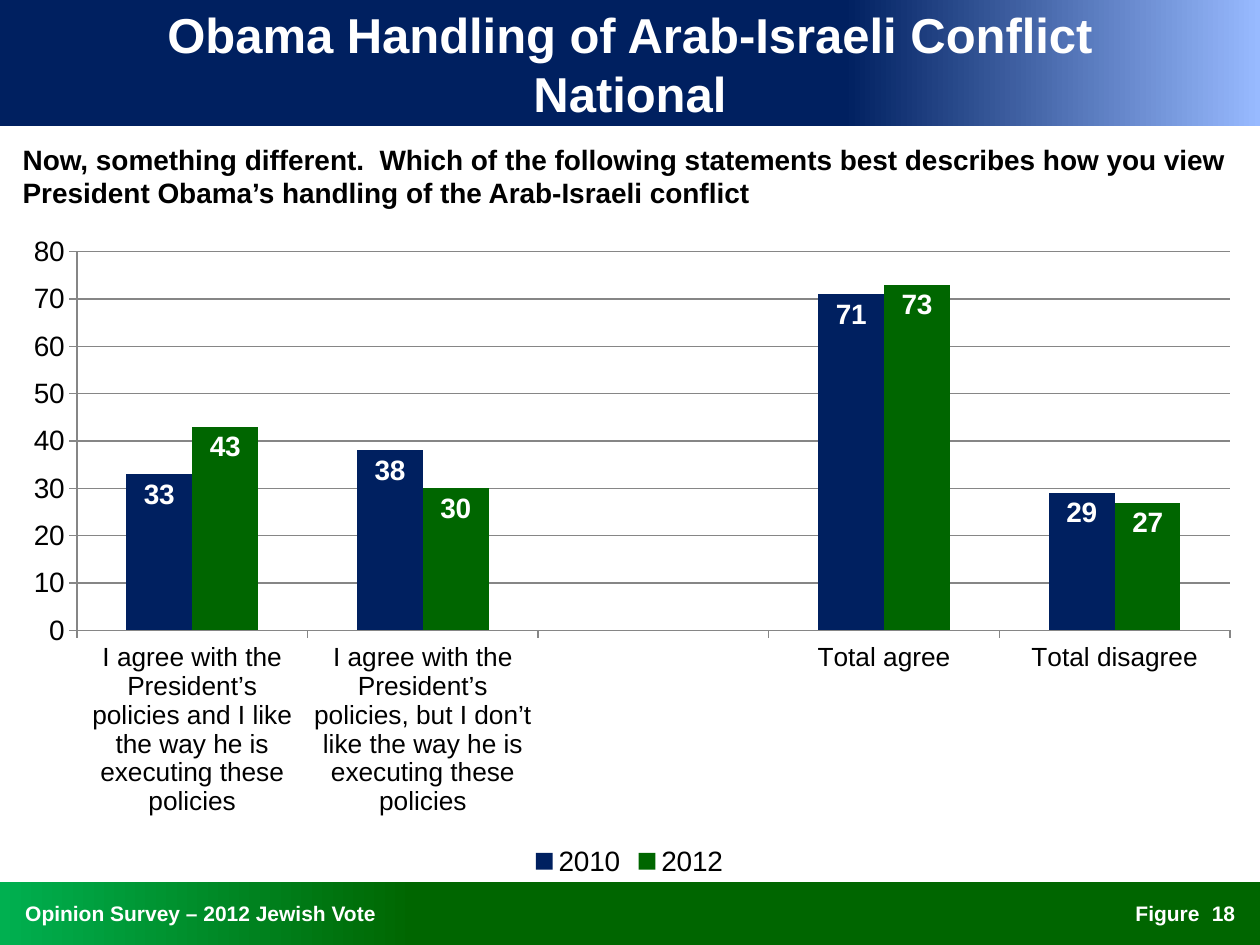
"""Build a slide with a clustered column chart of poll answers for two years."""
from lxml import etree
from pptx import Presentation
from pptx.chart.data import CategoryChartData
from pptx.dml.color import RGBColor
from pptx.enum.chart import XL_CHART_TYPE, XL_LABEL_POSITION, XL_LEGEND_POSITION, XL_TICK_MARK
from pptx.enum.shapes import MSO_SHAPE
from pptx.enum.text import MSO_ANCHOR, MSO_AUTO_SIZE, PP_ALIGN
from pptx.oxml.ns import qn
from pptx.util import Inches, Pt

LEFT, MID, RIGHT = PP_ALIGN.LEFT, PP_ALIGN.CENTER, PP_ALIGN.RIGHT
TOP, CENTRE = MSO_ANCHOR.TOP, MSO_ANCHOR.MIDDLE
OUT = XL_TICK_MARK.OUTSIDE
NAVY, GREEN, WHITE, BLACK, GREY = "002060", "006600", "FFFFFF", "000000", "868686"
rgb = RGBColor.from_string


def place(shape, box):
    """Put a shape at left, top, width and height in inches."""
    shape.left, shape.top, shape.width, shape.height = map(Inches, box)


def write(shape, text, size, hue, align, anchor, inset=0.1, right=0.1):
    """Fill a shape with bold text."""
    frame = shape.text_frame
    frame.text = text
    frame.word_wrap = True
    frame.auto_size = MSO_AUTO_SIZE.NONE
    frame.vertical_anchor = anchor
    frame.margin_left, frame.margin_right = Inches(inset), Inches(right)
    frame.margin_top = frame.margin_bottom = Inches(0.05)
    para = frame.paragraphs[0]
    para.alignment = align
    for run in para.runs:
        font = run.font
        font.name, font.size, font.bold = "Arial", Pt(size), True
        font.color.rgb = rgb(hue)


deck = Presentation()
deck.slide_width, deck.slide_height = Inches(10), Inches(7.5)
slide = deck.slides.add_slide(deck.slide_layouts[1])
shapes = slide.shapes
title, body = shapes.title, slide.placeholders[1]

for box, pale, deep, angle in [
    ((0, 7, 10, 0.5), "00B050", GREEN, 0),
    ((0, 0, 10, 1), "98BAFF", NAVY, 180),
]:
    band = shapes.add_shape(MSO_SHAPE.RECTANGLE, *map(Inches, box))
    band.shadow.inherit = False
    band.line.fill.background()
    band.fill.gradient()
    band.fill.gradient_angle = angle
    for stop, hue, spot in zip(band.fill.gradient_stops, (pale, deep), (0, 0.33)):
        stop.color.rgb, stop.position = rgb(hue), spot
    title.element.addprevious(band.element)

place(title, (0, 0, 10, 1))
write(title, "Obama Handling of Arab-Israeli Conflict\vNational", 28, WHITE, MID, CENTRE, 0.2, 0.2)
place(body, (0.08, 1.08, 9.83, 0.33))
write(
    body,
    "Now, something different.  Which of the following statements best describes how you view "
    "President Obama’s handling of the Arab-Israeli conflict",
    16, BLACK, LEFT, TOP,
)
props = body.text_frame.paragraphs[0].runs[0].font._element.getparent().getparent().find(qn("a:pPr"))
props.set("marL", "0")
props.set("indent", "0")
etree.SubElement(props, qn("a:buNone"))

for box, text, align, inset in [
    ((0, 7, 6.92, 0.5), "Opinion Survey – 2012 Jewish Vote", LEFT, 0.2),
    ((8.45, 7, 1.17, 0.5), "Figure", RIGHT, 0.1),
    ((9.42, 7, 0.58, 0.5), "18", MID, 0.1),
]:
    write(shapes.add_textbox(*map(Inches, box)), text, 12, WHITE, align, CENTRE, inset)

data = CategoryChartData()
data.categories = [
    "I agree with the President’s policies and I like the way he is executing these policies",
    "I agree with the President’s policies, but I don’t like the way he is executing these policies",
    "",
    "Total agree",
    "Total disagree",
]
data.add_series("2010", (33, 38, None, 71, 29))
data.add_series("2012", (43, 30, None, 73, 27))
area = map(Inches, (0.08, 1.75, 9.83, 5.25))
chart = shapes.add_chart(XL_CHART_TYPE.COLUMN_CLUSTERED, *area, data).chart
chart.has_title = False
chart.font.name, chart.font.size = "Arial", Pt(16)
chart.font.color.rgb = rgb(BLACK)
chart.has_legend = True
chart.legend.position = XL_LEGEND_POSITION.BOTTOM
chart.legend.include_in_layout = False

cats, vals = chart.category_axis, chart.value_axis
cats.tick_labels.font.size = Pt(15)
vals.minimum_scale, vals.maximum_scale, vals.major_unit = 0, 80, 10
vals.has_major_gridlines = True
for axis in (cats, vals):
    axis.major_tick_mark = OUT
for line in (cats.format.line, vals.format.line, vals.major_gridlines.format.line):
    line.color.rgb, line.width = rgb(GREY), Pt(0.75)

plot = chart.plots[0]
plot.gap_width, plot.overlap, plot.vary_by_categories = 150, 0, False
for series, hue in zip(plot.series, (NAVY, GREEN)):
    series.format.fill.solid()
    series.format.fill.fore_color.rgb = rgb(hue)
    series.invert_if_negative = False
    labels = series.data_labels
    labels.show_value, labels.position = True, XL_LABEL_POSITION.INSIDE_END
    labels.font.bold, labels.font.size = True, Pt(16)
    labels.font.color.rgb = rgb(WHITE)

zone = chart.element.find(".//" + qn("c:plotArea"))
for old in zone.findall(qn("c:layout")):
    zone.remove(old)
layout = etree.Element(qn("c:layout"))
manual = etree.SubElement(layout, qn("c:manualLayout"))
for tag, val in [
    ("layoutTarget", "inner"), ("xMode", "edge"), ("yMode", "edge"),
    ("x", "0.054"), ("y", "0.047"), ("w", "0.931"), ("h", "0.573"),
]:
    etree.SubElement(manual, qn("c:" + tag)).set("val", val)
zone.insert(0, layout)

deck.save("out.pptx")
